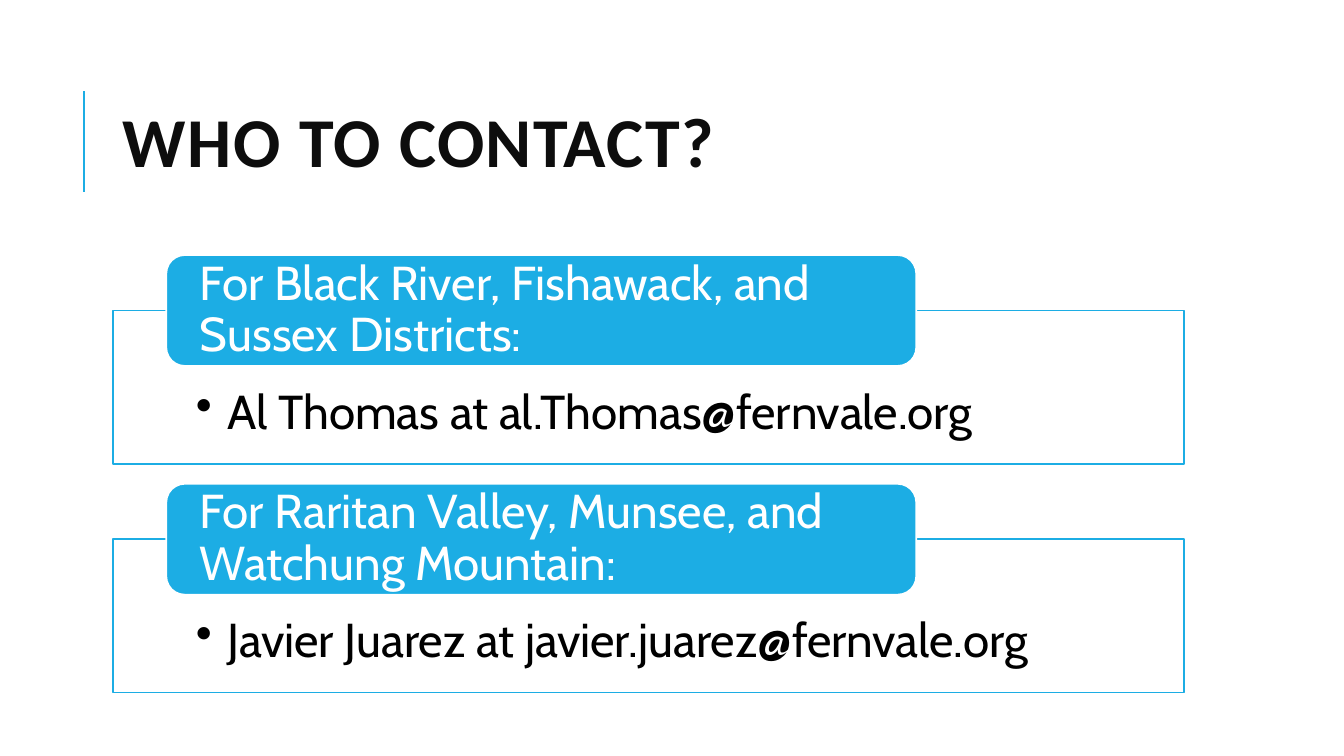
from pptx import Presentation
from pptx.dml.color import RGBColor
from pptx.enum.shapes import MSO_CONNECTOR, MSO_SHAPE
from pptx.enum.text import MSO_ANCHOR, MSO_AUTO_SIZE, PP_ALIGN
from pptx.oxml.ns import qn
from pptx.util import Pt
from lxml import etree

LINE = MSO_CONNECTOR.STRAIGHT
RECTANGLE, ROUNDED = MSO_SHAPE.RECTANGLE, MSO_SHAPE.ROUNDED_RECTANGLE
TOP, MIDDLE = MSO_ANCHOR.TOP, MSO_ANCHOR.MIDDLE
LEFT, NO_FIT = PP_ALIGN.LEFT, MSO_AUTO_SIZE.NONE

BLUE, WHITE, BLACK, INK = "1CADE4", "FFFFFF", "000000", "0D0D0D"
CONTENT_LEFT, CONTENT_WIDTH = 80.6, 765.4
FIRST_TOP, CONTACT_PITCH = 182.2, 163.4
BULLET_INDENT = 22.5

CONTACTS = [
    ("For Black River, Fishawack, and Sussex Districts:",
     "Al Thomas at al.Thomas@fernvale.org"),
    ("For Raritan Valley, Munsee, and Watchung Mountain:",
     "Javier Juarez at javier.juarez@fernvale.org"),
]


def colour(code):
    return RGBColor.from_string(code)


def set_values(target, values):
    for name, value in values.items():
        setattr(target, name, value)


def write_text(shape, text, code, frame_values, para_values, font_values):
    frame = shape.text_frame
    set_values(frame, {"word_wrap": True, "auto_size": NO_FIT, **frame_values})
    para = frame.paragraphs[0]
    set_values(para, {"alignment": LEFT, **para_values})
    span = para.add_run()
    span.text = text
    set_values(span.font, font_values)
    span.font.color.rgb = colour(code)
    return para, span


def add_box(page, kind, place, fill, line):
    box = page.shapes.add_shape(kind, *map(Pt, place))
    box.shadow.inherit = False
    box.fill.solid()
    box.fill.fore_color.rgb = colour(fill)
    box.line.color.rgb = colour(line)
    box.line.width = Pt(1.25)
    return box


def add_bullet(para):
    properties = para._p.get_or_add_pPr()
    properties.set("marL", str(Pt(BULLET_INDENT)))
    properties.set("indent", str(-Pt(BULLET_INDENT)))
    etree.SubElement(properties, qn("a:buChar")).set("char", "•")


def add_title(page, text):
    title = page.shapes.title
    place = {"left": CONTENT_LEFT, "top": 46, "width": CONTENT_WIDTH, "height": 118}
    set_values(title, {name: Pt(value) for name, value in place.items()})
    _, span = write_text(title, text, INK, {"vertical_anchor": MIDDLE},
                         {"line_spacing": 0.8},
                         {"name": "Calibri", "size": Pt(50), "bold": True})
    span.font._element.set("spc", "100")


def add_accent_line(page):
    accent = page.shapes.add_connector(LINE, Pt(60), Pt(137), Pt(60), Pt(65))
    accent.line.color.rgb = colour(BLUE)
    accent.line.width = Pt(1.5)
    etree.SubElement(accent._element.spPr, qn("a:effectLst"))


def add_contact(page, top, heading, detail):
    font_values = {"name": "Cabin", "size": Pt(34)}

    # Outlined panel with the person to contact
    panel = add_box(page, RECTANGLE,
                    (CONTENT_LEFT, top + 39.6, CONTENT_WIDTH, 109.4), WHITE, BLUE)
    para, _ = write_text(panel, detail, BLACK,
                         {"vertical_anchor": TOP, "margin_left": Pt(59.4),
                          "margin_right": Pt(59.4), "margin_top": Pt(55.4),
                          "margin_bottom": Pt(18.7)},
                         {"line_spacing": 0.9}, font_values)
    add_bullet(para)

    # Rounded heading across the panel's top edge
    label = add_box(page, ROUNDED, (118.8, top, 535.7, 79.2), BLUE, WHITE)
    write_text(label, heading, WHITE,
               {"vertical_anchor": MIDDLE, "margin_left": Pt(20.2),
                "margin_right": Pt(20.2), "margin_top": 0, "margin_bottom": 0},
               {"line_spacing": 0.9}, font_values)


def main():
    deck = Presentation()
    deck.slide_width, deck.slide_height = Pt(960), Pt(540)
    page = deck.slides.add_slide(deck.slide_layouts.get_by_name("Title Only"))

    # Heading
    add_accent_line(page)
    add_title(page, "WHO TO CONTACT?")

    # Contacts, one below the other
    for index, (heading, detail) in enumerate(CONTACTS):
        add_contact(page, FIRST_TOP + index * CONTACT_PITCH, heading, detail)

    deck.save("out.pptx")


if __name__ == "__main__":
    main()
